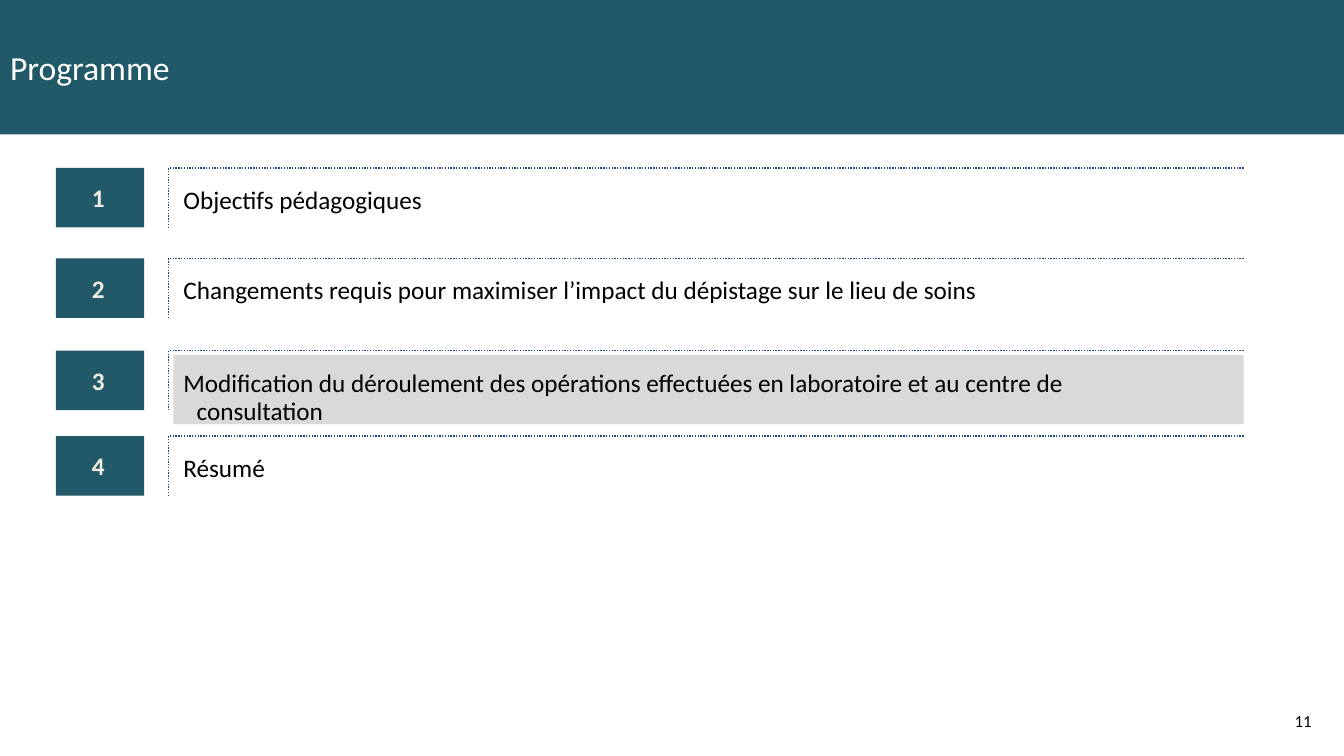
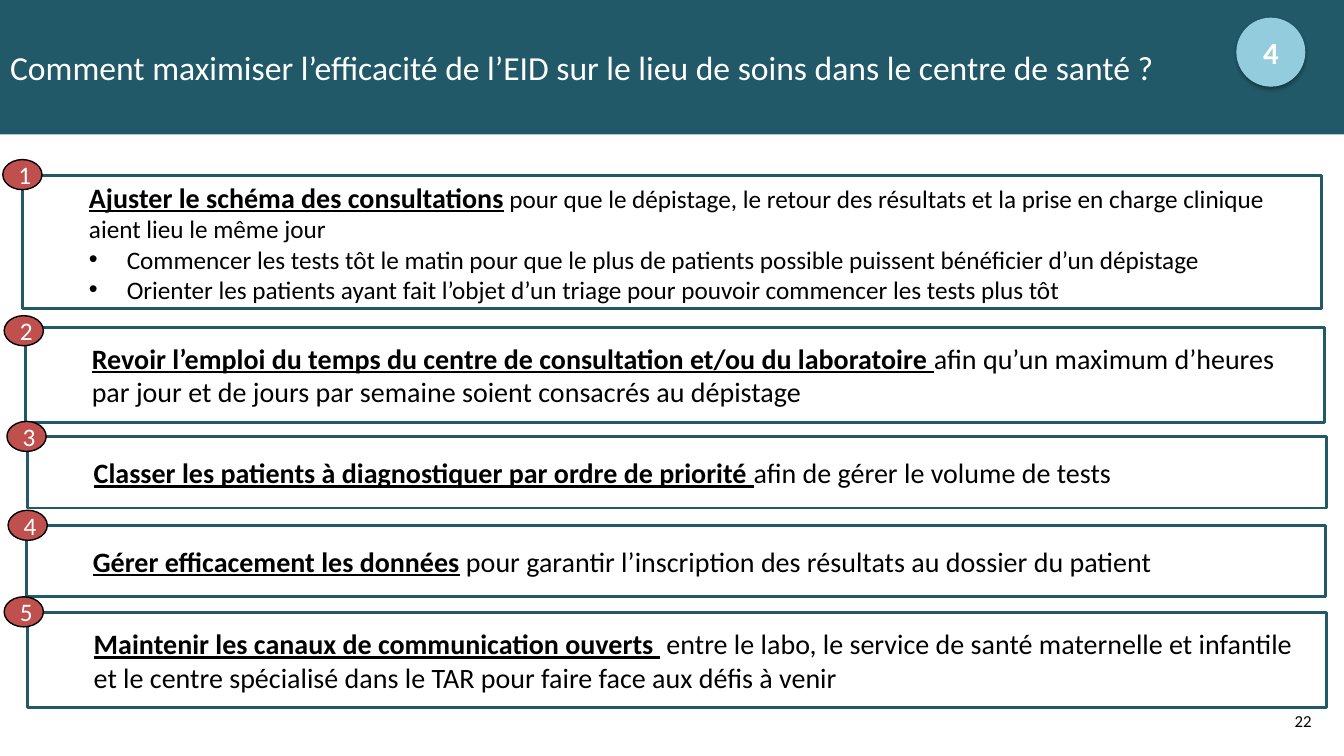
from lxml import etree
from pptx import Presentation
from pptx.dml.color import RGBColor
from pptx.enum.dml import MSO_LINE
from pptx.enum.shapes import MSO_SHAPE as Preset
from pptx.enum.text import MSO_ANCHOR as Anchor, PP_ALIGN as Align
from pptx.oxml import parse_xml
from pptx.oxml.ns import nsdecls, qn
from pptx.util import Pt

FONT = "Calibri"
COLORS = {
    "teal": "215968",
    "grey": "D9D9D9",
    "cream": "EEECE1",
    "navy": "1F497D",
    "red": "C0504D",
    "sky": "93CDDD",
    "white": "FFFFFF",
    "black": "000000",
}
AGENDA = [
    (120, "Objectifs pédagogiques"),
    (184.5, "Changements requis pour maximiser l’impact du dépistage sur le lieu de soins"),
    (250.5, "Modification du déroulement des opérations effectuées en laboratoire "
            "et au centre de consultation"),
    (311.5, "Résumé"),
]
ADVICE = [
    {"box": (16, 125.5, 95), "badge": (2, 114), "size": 18,
     "lead": "Ajuster le schéma des consultations",
     "rest": " pour que le dépistage, le retour des résultats et la prise en charge "
             "clinique aient lieu le même jour",
     "bullets": [
         "Commencer les tests tôt le matin pour que le plus de patients possible "
         "puissent bénéficier d’un dépistage",
         "Orienter les patients ayant fait l’objet d’un triage pour pouvoir "
         "commencer les tests plus tôt"]},
    {"box": (18, 234, 67.7), "badge": (3, 225.5),
     "lead": "Revoir l’emploi du temps du centre de consultation et/ou du laboratoire ",
     "rest": "afin qu’un maximum d’heures par jour et de jours par semaine soient "
             "consacrés au dépistage"},
    {"box": (19.4, 311.8, 51.1), "badge": (5, 301),
     "lead": "Classer les patients à diagnostiquer par ordre de priorité ",
     "rest": "afin de gérer le volume de tests"},
    {"box": (18.7, 375.1, 51.1), "badge": (5.8, 364.5),
     "lead": "Gérer efficacement les données",
     "rest": " pour garantir l’inscription des résultats au dossier du patient"},
    {"box": (19.4, 437.8, 67.7), "badge": (3, 426.3),
     "lead": "Maintenir les canaux de communication ouverts ",
     "rest": " entre le labo, le service de santé maternelle et infantile et le centre "
             "spécialisé dans le TAR pour faire face aux défis à venir"},
]


def color(name):
    return RGBColor.from_string(COLORS[name])


def style(span, size, ink="black", bold=False, underline=False):
    span.font.name = FONT
    span.font.size = Pt(size)
    span.font.color.rgb = color(ink)
    span.font.bold = bold
    span.font.underline = underline


def write(box, text, size, ink="black", bold=False, align=Align.LEFT, anchor=Anchor.MIDDLE):
    frame = box.text_frame
    frame.text = text
    frame.word_wrap = True
    frame.vertical_anchor = anchor
    para = frame.paragraphs[0]
    para.alignment = align
    style(para.runs[0], size, ink, bold)
    return para


def set_insets(box, left, top, right, bottom):
    frame = box.text_frame
    frame.margin_left, frame.margin_top = Pt(left), Pt(top)
    frame.margin_right, frame.margin_bottom = Pt(right), Pt(bottom)


def indent(para, left, first=0):
    props = para._p.get_or_add_pPr()
    props.set("marL", str(Pt(left)))
    props.set("indent", str(Pt(first)))
    return props


def add_box(shapes, preset, place, fill, line=None, weight=1):
    box = shapes.add_shape(preset, *map(Pt, place))
    box.shadow.inherit = False
    box.fill.solid()
    box.fill.fore_color.rgb = color(fill)
    if line:
        box.line.color.rgb = color(line)
        box.line.width = Pt(weight)
    else:
        box.line.fill.background()
    return box


def add_text(shapes, place, text, size, **options):
    box = shapes.add_textbox(*map(Pt, place))
    return box, write(box, text, size, **options)


def add_page(deck, title, number):
    page = deck.slides.add_slide(deck.slide_layouts[5])
    band = page.shapes.title
    band.left, band.top, band.width, band.height = map(Pt, (0, 0, 960, 96))
    band.fill.solid()
    band.fill.fore_color.rgb = color("teal")
    write(band, title, 24, "white")
    add_text(page.shapes, (872, 500.5, 72, 28.8), number, 12, align=Align.RIGHT)
    return page


def add_agenda_row(page, number, top, text):
    row = page.shapes.add_group_shape().shapes
    tile = add_box(row, Preset.RECTANGLE, (40, top, 63, 42.5), "teal")
    write(tile, str(number), 18, "cream", bold=True, align=Align.CENTER)
    set_insets(tile, 4.3, 3.6, 7.2, 3.6)
    label, para = add_text(row, (131, top + 13.2, 713.5, 21), text, 18, anchor=Anchor.TOP)
    set_insets(label, 0, 0, 0, 0)
    para.line_spacing = 0.95
    indent(para, 9.5, -9.5)
    outline = row.build_freeform(Pt(888.3), Pt(top))
    outline.add_line_segments([(Pt(120.5), Pt(top)), (Pt(120.5), Pt(top + 42.5))], close=False)
    corner = outline.convert_to_shape()
    corner.shadow.inherit = False
    corner.fill.background()
    corner.line.color.rgb = color("navy")
    corner.line.width = Pt(1)
    corner.line.dash_style = MSO_LINE.ROUND_DOT


def add_bullet(frame, text):
    para = frame.add_paragraph()
    para.text = text
    para.alignment = Align.LEFT
    style(para.runs[0], 18)
    props = indent(para, 67.5, -27)
    etree.SubElement(props, qn("a:buFont")).set("typeface", "Arial")
    etree.SubElement(props, qn("a:buChar")).set("char", "•")


def add_advice(page, number, item):
    left, top, height = item["box"]
    box = add_box(page.shapes, Preset.RECTANGLE, (left, top, 928, height), "white", "teal", 2)
    para = write(box, item["lead"], 20, bold=True)
    para.runs[0].font.underline = True
    indent(para, 40.5)
    rest = para.add_run()
    rest.text = item["rest"]
    style(rest, item.get("size", 20))
    for text in item.get("bullets", []):
        add_bullet(box.text_frame, text)
    badge = add_box(page.shapes, Preset.OVAL, (*item["badge"], 28, 21.5), "red", "black")
    write(badge, str(number), 18, "white", align=Align.CENTER)


def add_section_mark(page, text):
    mark = add_box(page.shapes, Preset.OVAL, (883.5, 13, 48.5, 48.5), "sky", "sky", 0.75)
    write(mark, text, 22, "white", bold=True, align=Align.CENTER)
    effects = mark._element.spPr.find(qn("a:effectLst"))
    effects.append(parse_xml(
        f'<a:outerShdw {nsdecls("a")} blurRad="{Pt(3.1)}" dist="{Pt(1.8)}" dir="5400000" '
        f'rotWithShape="0"><a:srgbClr val="{COLORS["black"]}"><a:alpha val="35000"/>'
        '</a:srgbClr></a:outerShdw>'))


def main():
    deck = Presentation()
    deck.slide_width, deck.slide_height = Pt(960), Pt(540)

    page = add_page(deck, "Programme", "11")
    add_box(page.shapes, Preset.RECTANGLE, (123.8, 253.5, 764.5, 49.5), "grey")
    for number, (top, text) in enumerate(AGENDA, 1):
        add_agenda_row(page, number, top, text)

    page = add_page(
        deck, "Comment maximiser l’efficacité de l’EID sur le lieu de soins "
        "dans le centre de santé ?", "22")
    for number, item in enumerate(ADVICE, 1):
        add_advice(page, number, item)
    add_section_mark(page, "4")

    deck.save("out.pptx")


if __name__ == "__main__":
    main()
